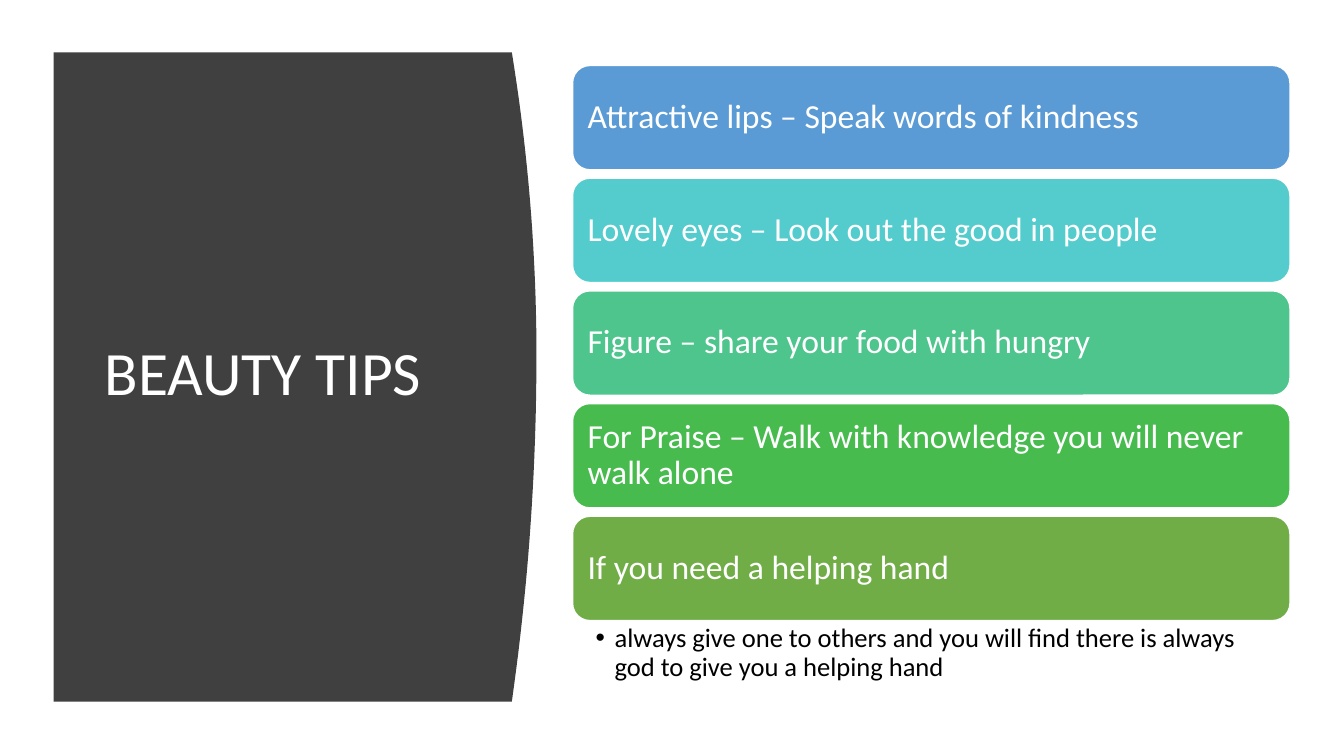
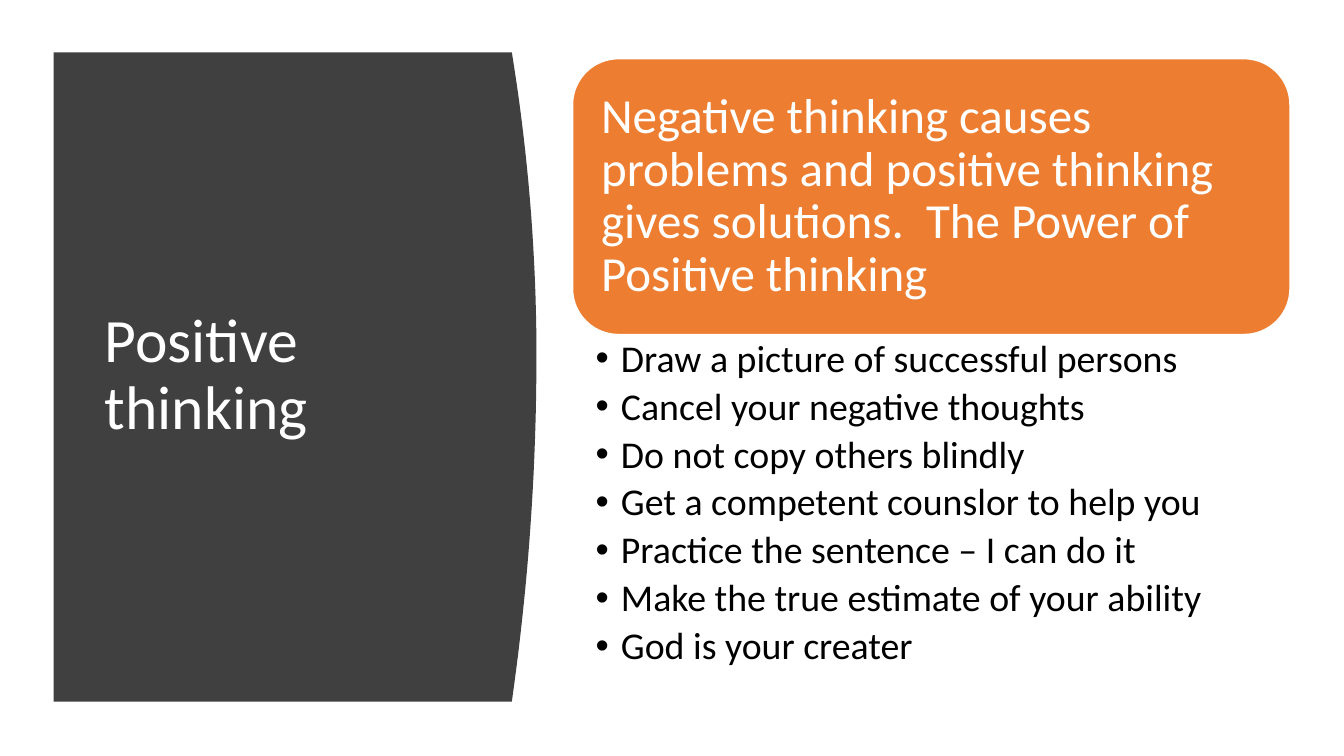
from lxml import etree
from pptx import Presentation
from pptx.dml.color import RGBColor
from pptx.enum.shapes import MSO_SHAPE
from pptx.enum.text import MSO_ANCHOR, PP_ALIGN
from pptx.oxml.ns import qn
from pptx.util import Cm, Pt

ROUND = MSO_SHAPE.ROUNDED_RECTANGLE
TOP, MIDDLE = MSO_ANCHOR.TOP, MSO_ANCHOR.MIDDLE
LEFT = PP_ALIGN.LEFT

FONT = "Calibri"
WHITE, BLACK, DARK = "FFFFFF", "000000", "404040"

# Shared boxes in cm: left, top, width, height
PANEL = (1.35, 1.32, 12.17, 16.36)
BODY_X, BODY_W = 14.43, 18.08

TIPS = [
    ("Attractive lips – Speak words of kindness", "5B9BD5"),
    ("Lovely eyes – Look out the good in people", "54CCCD"),
    ("Figure – share your food with hungry", "4DC58D"),
    ("For Praise – Walk with knowledge you will never walk alone", "48BB4F"),
    ("If you need a helping hand", "70AD47"),
]
HELP = ["always give one to others and you will find there is always "
        "god to give you a helping hand"]
CLAIM = ("Negative thinking causes problems and positive thinking gives "
         "solutions.  The Power of Positive thinking")
STEPS = [
    "Draw a picture of successful persons",
    "Cancel your negative thoughts",
    "Do not copy others blindly",
    "Get a competent counslor to help you",
    "Practice the sentence – I can do it",
    "Make the true estimate of your ability",
    "God is your creater",
]


def paint(part, color):
    part.solid()
    part.fore_color.rgb = RGBColor.from_string(color)


def write(shape, lines, size, color=WHITE, anchor=MIDDLE,
          pad=(0.25, 0.13, 0.25, 0.13), after=0, hang=0):
    """Fill a shape with paragraphs; a hang in cm makes them bullets."""
    frame = shape.text_frame
    frame.word_wrap = True
    frame.vertical_anchor = anchor
    (frame.margin_left, frame.margin_top,
     frame.margin_right, frame.margin_bottom) = map(Cm, pad)
    for i, line in enumerate(lines):
        para = frame.paragraphs[0] if i == 0 else frame.add_paragraph()
        para.alignment = LEFT
        para.line_spacing = 0.9
        para.space_after = Pt(after)
        run = para.add_run()
        run.text = line
        run.font.name = FONT
        run.font.size = Pt(size)
        run.font.color.rgb = RGBColor.from_string(color)
        if hang:
            props = para._p.get_or_add_pPr()
            props.set("marL", str(Cm(hang)))
            props.set("indent", str(-Cm(hang)))
            etree.SubElement(props, qn("a:buFont")).set("typeface", "Arial")
            etree.SubElement(props, qn("a:buChar")).set("char", "•")


def add_panel(slide, box, title):
    """Dark panel with a bulging right edge, and the title on it."""
    x, y, w, h = box
    bulge, peak, steps = 0.62, 0.467, 40
    edge = []
    for i in range(steps + 1):
        part = i / steps
        span = peak if part < peak else 1 - peak
        drop = bulge * ((part - peak) / span) ** 2
        edge.append((Cm(x + w - drop), Cm(y + h * part)))
    pen = slide.shapes.build_freeform(Cm(x), Cm(y))
    pen.add_line_segments(edge + [(Cm(x), Cm(y + h))], close=True)
    panel = pen.convert_to_shape()
    panel.shadow.inherit = False
    paint(panel.fill, DARK)
    panel.line.fill.background()
    label = slide.shapes.add_textbox(
        Cm(x + 1.04), Cm(y + 1.5), Cm(9.5), Cm(h - 3.05))
    write(label, [title], 44)


def add_card(slide, box, text, color, size, pad):
    card = slide.shapes.add_shape(ROUND, *map(Cm, box))
    card.shadow.inherit = False
    paint(card.fill, color)
    paint(card.line.fill, WHITE)
    card.line.width = Pt(1)
    write(card, [text], size, pad=(pad,) * 4)


def add_list(slide, box, lines, size, pad, after, hang):
    area = slide.shapes.add_textbox(*map(Cm, box))
    write(area, lines, size, color=BLACK, anchor=TOP,
          pad=pad, after=after, hang=hang)


def add_tips(slide, x, y, w):
    """Column of cards with a note under the last one."""
    high, pitch = 2.63, 2.84
    for i, (text, color) in enumerate(TIPS):
        add_card(slide, (x, y + i * pitch, w, high), text, color, 24, 0.25)
    add_list(slide, (x, y + len(TIPS) * pitch - 0.18, w, 1.65), HELP, 19,
             pad=(0.58, 0.08, 0.48, 0.08), after=4, hang=0.48)


def add_steps(slide, x, y, w):
    """One large card above a bulleted list."""
    high = 6.95
    add_card(slide, (x, y, w, high), CLAIM, "ED7D31", 35, 0.38)
    add_list(slide, (x, y + high, w, 9.07), STEPS, 27,
             pad=(0.58, 0.13, 0.69, 0.13), after=5, hang=0.64)


def main():
    deck = Presentation()
    deck.slide_width, deck.slide_height = Cm(33.87), Cm(19.05)
    pages = [("BEAUTY TIPS", add_tips, 1.65),
             ("Positive thinking", add_steps, 1.48)]
    for title, fill_body, top in pages:
        slide = deck.slides.add_slide(deck.slide_layouts[6])
        add_panel(slide, PANEL, title)
        fill_body(slide, BODY_X, top, BODY_W)
    deck.save("out.pptx")


if __name__ == "__main__":
    main()
